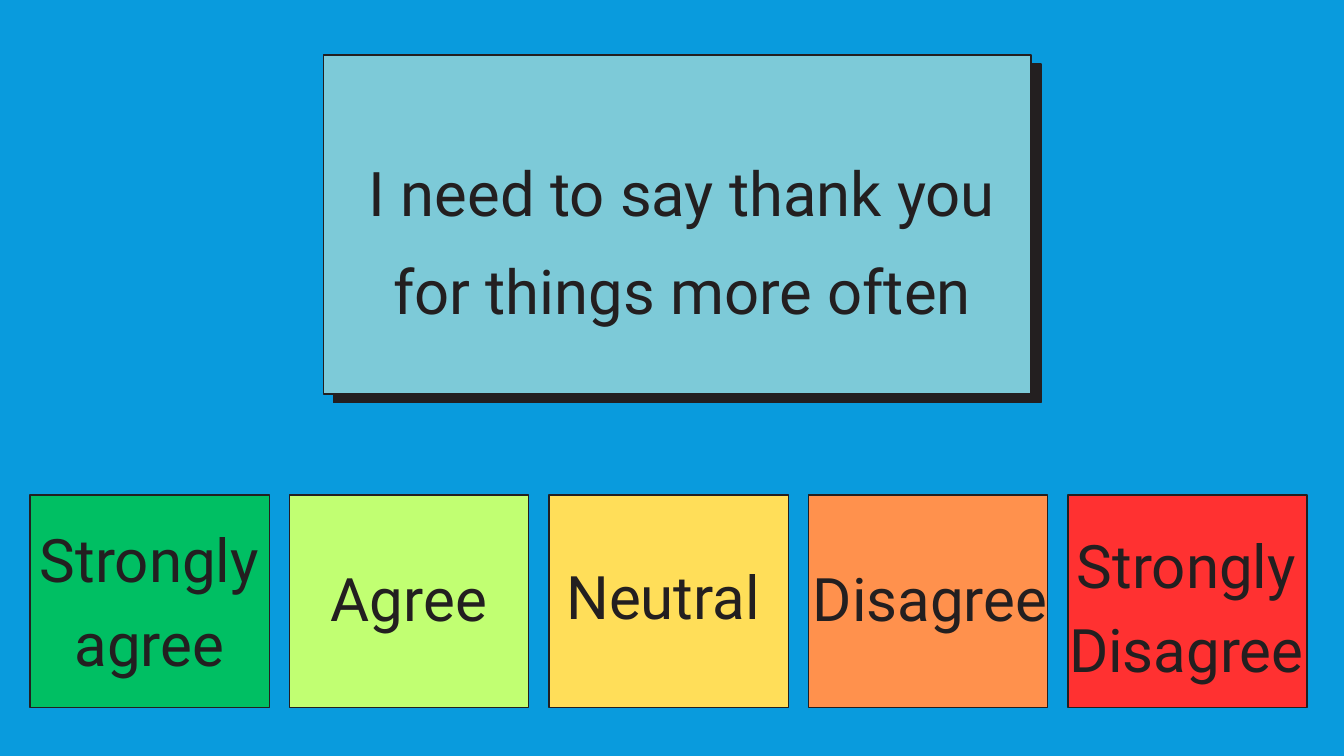
from dataclasses import dataclass

from pptx import Presentation
from pptx.dml.color import RGBColor
from pptx.enum.shapes import MSO_SHAPE
from pptx.enum.text import PP_ALIGN
from pptx.slide import Slide
from pptx.util import Pt

SKY = RGBColor(0x09, 0x9B, 0xDD)
INK = RGBColor(0x23, 0x1F, 0x20)
AQUA = RGBColor(0x7D, 0xCA, 0xD8)
GREEN = RGBColor(0x00, 0xBF, 0x63)
LIME = RGBColor(0xC1, 0xFF, 0x72)
YELLOW = RGBColor(0xFF, 0xDE, 0x59)
ORANGE = RGBColor(0xFF, 0x91, 0x4D)
RED = RGBColor(0xFF, 0x31, 0x31)

FONT = "Roboto"
ANSWER_LEFT, ANSWER_TOP, ANSWER_PITCH = 32.2, 530.4, 278
ANSWER_WIDTH, ANSWER_HEIGHT = 256.4, 228


@dataclass(frozen=True)
class Box:
    left: float
    top: float
    width: float
    height: float


@dataclass(frozen=True)
class Answer:
    lines: tuple[str, ...]
    color: RGBColor
    label: Box


ANSWERS = (
    Answer(("Strongly", "agree"), GREEN, Box(37.4, 546.5, 245.5, 181.4)),
    Answer(("Agree",), LIME, Box(341.3, 588.2, 193.7, 88)),
    Answer(("Neutral",), YELLOW, Box(597.6, 586.8, 226.1, 90.7)),
    Answer(("Disagree",), ORANGE, Box(857.5, 588.2, 278, 90.7)),
    Answer(("Strongly", "Disagree"), RED, Box(1140.5, 553.7, 261.4, 181.4)),
)


def add_card(slide: Slide, box: Box, color: RGBColor) -> None:
    card = slide.shapes.add_shape(
        MSO_SHAPE.RECTANGLE, Pt(box.left), Pt(box.top), Pt(box.width), Pt(box.height)
    )
    card.shadow.inherit = False
    card.fill.solid()
    card.fill.fore_color.rgb = color
    card.line.color.rgb = INK
    card.line.width = Pt(1.5)


def add_label(
    slide: Slide, box: Box, lines: tuple[str, ...], size: float, spacing: float
) -> None:
    label = slide.shapes.add_textbox(
        Pt(box.left), Pt(box.top), Pt(box.width), Pt(box.height)
    )
    frame = label.text_frame
    frame.word_wrap = True
    frame.margin_left = frame.margin_right = Pt(0)
    frame.margin_top = frame.margin_bottom = Pt(0)
    frame.text = "\n".join(lines)
    for paragraph in frame.paragraphs:
        paragraph.alignment = PP_ALIGN.CENTER
        paragraph.line_spacing = Pt(spacing)
        paragraph.font.name = FONT
        paragraph.font.size = Pt(size)
        paragraph.font.color.rgb = INK


def main() -> None:
    presentation = Presentation()
    presentation.slide_width = Pt(1440)
    presentation.slide_height = Pt(810)
    slide = presentation.slides.add_slide(presentation.slide_layouts[6])
    slide.background.fill.solid()
    slide.background.fill.fore_color.rgb = SKY

    add_card(slide, Box(357.2, 68.6, 758.2, 363), INK)
    add_card(slide, Box(346.4, 59, 758.2, 363), AQUA)
    statement = ("I need to say thank you for things more often",)
    add_label(slide, Box(357.2, 141.1, 747.4, 205.2), statement, 66, 104.6)

    for column, answer in enumerate(ANSWERS):
        left = ANSWER_LEFT + column * ANSWER_PITCH
        add_card(slide, Box(left, ANSWER_TOP, ANSWER_WIDTH, ANSWER_HEIGHT), answer.color)
    for answer in ANSWERS:
        add_label(slide, answer.label, answer.lines, 64.3, 90.1)

    presentation.save("out.pptx")


if __name__ == "__main__":
    main()
